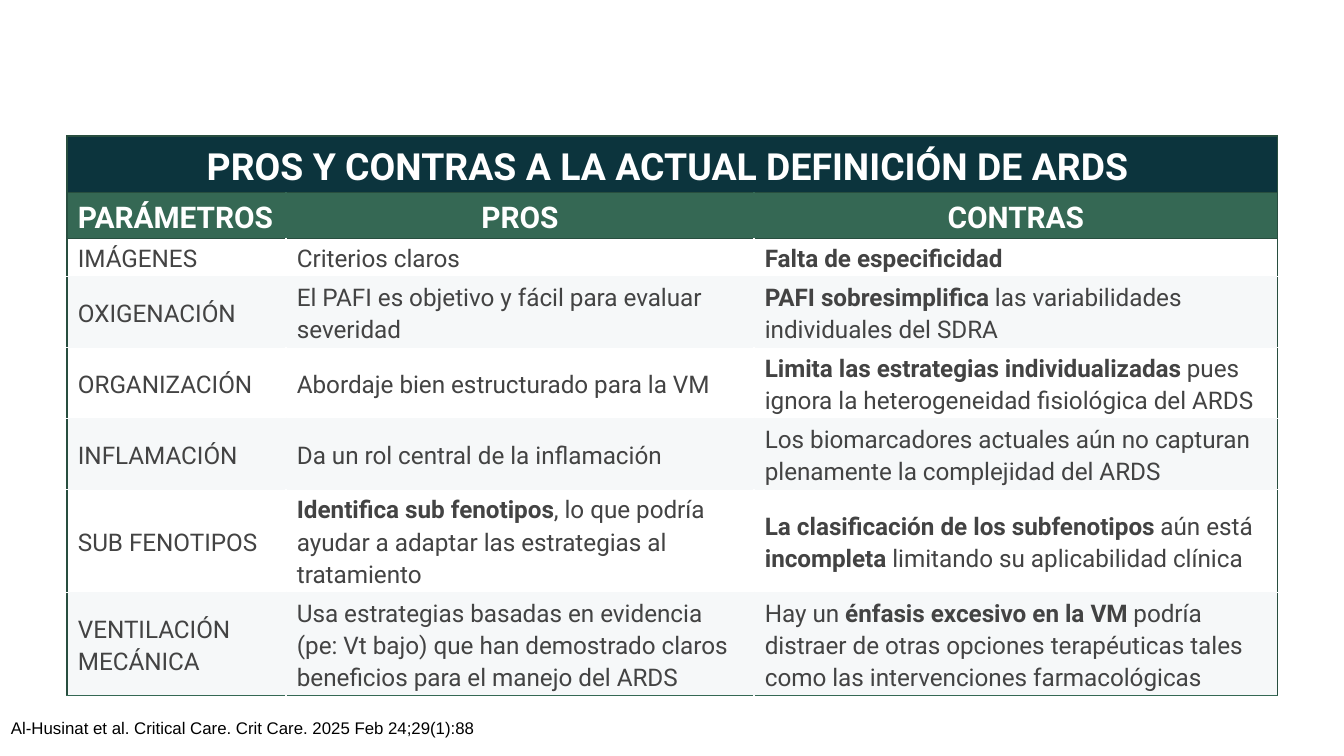
from pptx import Presentation
from pptx.dml.color import RGBColor
from pptx.enum.text import MSO_ANCHOR, PP_ALIGN
from pptx.oxml.ns import qn
from pptx.util import Pt
from lxml import etree

MIDDLE = MSO_ANCHOR.MIDDLE
LEFT, CENTER = PP_ALIGN.LEFT, PP_ALIGN.CENTER

NAVY = RGBColor(0x0C, 0x34, 0x3D)
GREEN = RGBColor(0x35, 0x68, 0x54)
DARK_GREEN = RGBColor(0x28, 0x4E, 0x3F)
PALE = RGBColor(0xF6, 0xF8, 0xF9)
WHITE = RGBColor(0xFF, 0xFF, 0xFF)
GRAY = RGBColor(0x43, 0x43, 0x43)
BLACK = RGBColor(0x00, 0x00, 0x00)

EMU_PER_PX = 914400 / 134.4
COLUMN_WIDTHS = [219, 468, 524]
ROW_HEIGHTS = [56, 45, 38, 71, 70, 71, 102, 103]

TITLE = "PROS Y CONTRAS A LA ACTUAL DEFINICIÓN DE ARDS "
HEADINGS = ["PARÁMETROS", "PROS", "CONTRAS"]
# Double asterisks enclose bold words
BODY = [
    ["IMÁGENES", "Criterios claros", "**Falta de especificidad**"],
    ["OXIGENACIÓN",
     "El PAFI es objetivo y fácil para evaluar severidad",
     "**PAFI sobresimplifica** las variabilidades individuales del SDRA"],
    ["ORGANIZACIÓN",
     "Abordaje bien estructurado para la VM",
     "**Limita las estrategias individualizadas** pues ignora la "
     "heterogeneidad fisiológica del ARDS"],
    ["INFLAMACIÓN",
     "Da un rol central de la inflamación",
     "Los biomarcadores actuales aún no capturan plenamente la "
     "complejidad del ARDS"],
    ["SUB FENOTIPOS",
     "**Identifica sub fenotipos**, lo que podría ayudar a adaptar las "
     "estrategias al tratamiento",
     "**La clasificación de los subfenotipos** aún está **incompleta "
     "**limitando su aplicabilidad clínica"],
    ["VENTILACIÓN MECÁNICA",
     "Usa estrategias basadas en evidencia (pe: Vt bajo) que han demostrado "
     "claros beneficios para el manejo del ARDS",
     "Hay un **énfasis excesivo en la VM** podría distraer de otras opciones "
     "terapéuticas tales como las intervenciones farmacológicas"],
]
SOURCE = "Al‑Husinat et al. Critical Care. Crit Care. 2025 Feb 24;29(1):88"


def px(length):
    return round(length * EMU_PER_PX)


class SlideBuilder:
    font = "Roboto"
    line_spacing = 1.15

    def __init__(self, deck):
        self.slide = deck.slides.add_slide(deck.slide_layouts[6])

    def table(self, left, top, widths, heights):
        frame = self.slide.shapes.add_table(
            len(heights), len(widths), px(left), px(top),
            px(sum(widths)), px(sum(heights)))
        table = frame.table
        table.first_row = table.horz_banding = False
        for column, width in zip(table.columns, widths):
            column.width = px(width)
        for row, height in zip(table.rows, heights):
            row.height = px(height)
        return table

    def cell(self, cell, text, size, color, fill, borders,
             align=LEFT, bold=False):
        cell.margin_left = cell.margin_right = px(11)
        cell.margin_top = cell.margin_bottom = px(3)
        cell.vertical_anchor = MIDDLE
        self.borders(cell, borders)
        cell.fill.solid()
        cell.fill.fore_color.rgb = fill
        para = cell.text_frame.paragraphs[0]
        para.alignment = align
        para.line_spacing = self.line_spacing
        for index, words in enumerate(text.split("**")):
            if words:
                span = para.add_run()
                span.text = words
                self.style(span, self.font, size, color, bold or index % 2 == 1)

    def borders(self, cell, colors):
        properties = cell._tc.get_or_add_tcPr()
        for side, color in zip("LRTB", colors):
            line = etree.SubElement(properties, qn(f"a:ln{side}"), w=str(Pt(0.75)))
            solid = etree.SubElement(line, qn("a:solidFill"))
            etree.SubElement(solid, qn("a:srgbClr"), val=str(color))

    def text(self, left, top, width, height, text, font, size, color):
        box = self.slide.shapes.add_textbox(
            px(left), px(top), px(width), px(height))
        frame = box.text_frame
        frame.word_wrap = True
        frame.margin_left = frame.margin_right = px(13)
        frame.margin_top = frame.margin_bottom = px(13)
        frame.text = text
        self.style(frame.paragraphs[0].runs[0], font, size, color)

    def style(self, span, font, size, color, bold=False):
        span.font.name = font
        span.font.size = Pt(size)
        span.font.bold = bold
        span.font.color.rgb = color


def main():
    deck = Presentation()
    deck.slide_width, deck.slide_height = px(1344), px(756)
    page = SlideBuilder(deck)
    table = page.table(67, 136, COLUMN_WIDTHS, ROW_HEIGHTS)
    last_column = len(COLUMN_WIDTHS) - 1

    # Title row across all columns
    table.cell(0, 0).merge(table.cell(0, last_column))
    for column in range(len(COLUMN_WIDTHS)):
        page.cell(table.cell(0, column), "" if column else TITLE, 20, WHITE,
                  NAVY, [DARK_GREEN] * 4, CENTER, True)

    # Headings and body: outer edges are green, inner ones blend in
    for row, texts in enumerate([HEADINGS] + BODY, start=1):
        heading = row == 1
        fill = GREEN if heading else (PALE if row % 2 else WHITE)
        top = DARK_GREEN if row <= 2 else PALE
        bottom = DARK_GREEN if heading else PALE
        if row == len(BODY) + 1:
            bottom = GREEN
        for column, text in enumerate(texts):
            borders = [DARK_GREEN if column == 0 else fill,
                       DARK_GREEN if column == last_column else fill,
                       top, bottom]
            page.cell(table.cell(row, column), text,
                      16 if heading else 13, WHITE if heading else GRAY,
                      fill, borders,
                      CENTER if heading and column else LEFT, heading)

    # Citation
    page.text(-2, 708, 1349, 47, SOURCE, "Arial", 9, BLACK)
    deck.save("out.pptx")


if __name__ == "__main__":
    main()
